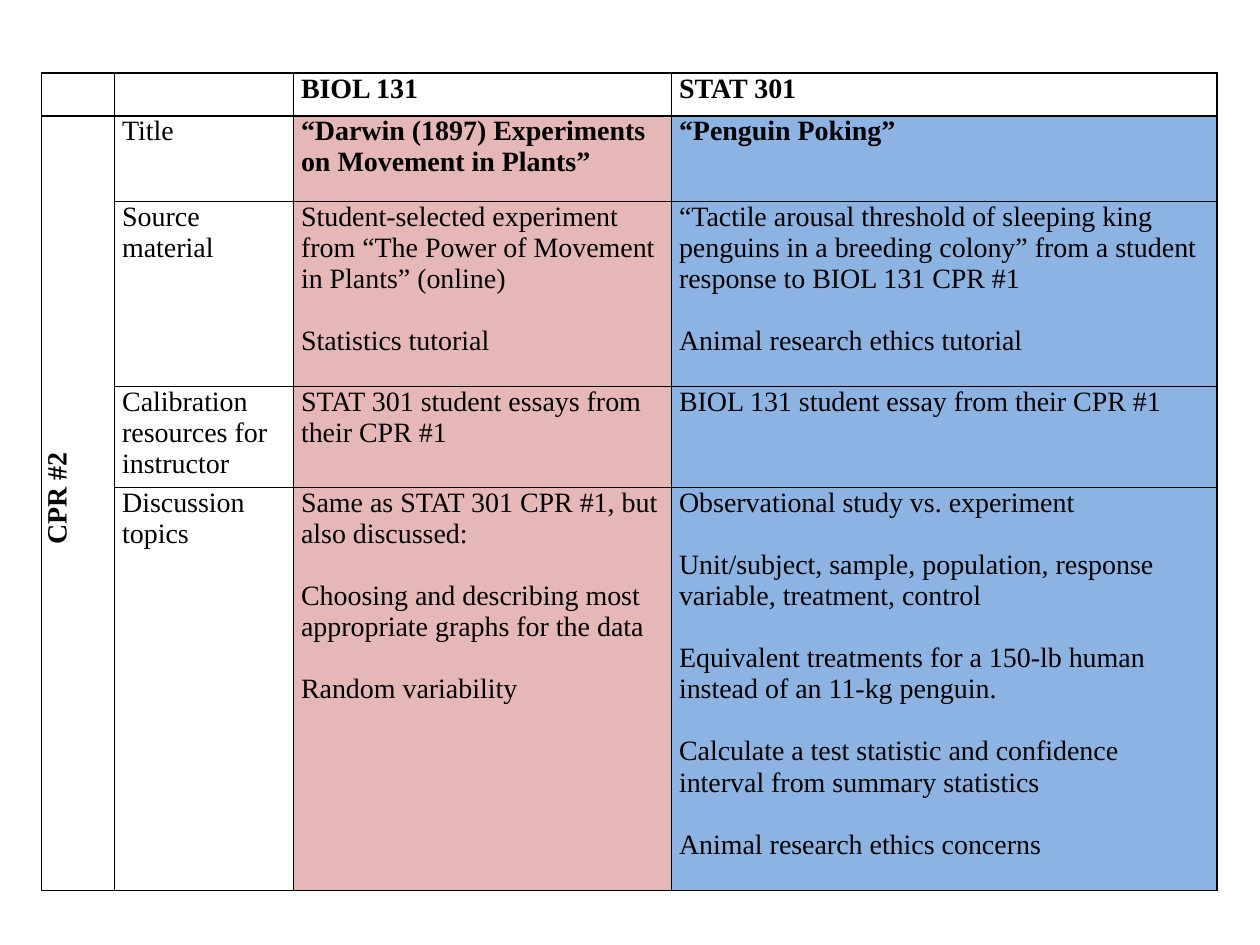
import pptx
import pptx.util
import pptx.dml.color
import pptx.enum.text
from lxml import etree
from pptx.oxml.ns import qn

Inches = pptx.util.Inches
Pt = pptx.util.Pt

BLACK, WHITE, ROSE, SKY = "000000", "FFFFFF", "E5B8B7", "8DB3E2"
COLUMN_WIDTHS = [0.58, 1.42, 3, 4.33]
ROW_HEIGHTS = [0.34, 0.68, 1.47, 0.8, 3.2]

# Row label, biology paragraphs, statistics paragraphs
TOPICS = [
    ("Title",
     ["“Darwin (1897) Experiments on Movement in Plants”"],
     ["“Penguin Poking”"]),
    ("Source material",
     ["Student-selected experiment from “The Power of Movement in Plants” (online)",
      "Statistics tutorial"],
     ["“Tactile arousal threshold of sleeping king penguins in a breeding colony” "
      "from a student response to BIOL 131 CPR #1",
      "Animal research ethics tutorial"]),
    ("Calibration resources for instructor",
     ["STAT 301 student essays from their CPR #1"],
     ["BIOL 131 student essay from their CPR #1"]),
    ("Discussion topics",
     ["Same as STAT 301 CPR #1, but also discussed:",
      "Choosing and describing most appropriate graphs for the data",
      "Random variability"],
     ["Observational study vs. experiment",
      "Unit/subject, sample, population, response variable, treatment, control",
      "Equivalent treatments for a 150-lb human instead of an 11-kg penguin.",
      "Calculate a test statistic and confidence interval from summary statistics",
      "Animal research ethics concerns"]),
]


def color(hex_string):
    return pptx.dml.color.RGBColor.from_string(hex_string)


class SlideWriter:
    font = "Times New Roman"
    size = 16
    paragraph_gap = 17.7  # one line of text

    def __init__(self, slide):
        self.slide = slide

    def table(self, left, top, widths, heights):
        frame = self.slide.shapes.add_table(
            len(heights), len(widths), Inches(left), Inches(top),
            Inches(sum(widths)), Inches(sum(heights)))
        table = frame.table
        table.first_row = table.horz_banding = False
        for column, width in zip(table.columns, widths):
            column.width = Inches(width)
        for row, height in zip(table.rows, heights):
            row.height = Inches(height)
        for cell in table.iter_cells():
            self.plain_cell(cell)
        return table

    def plain_cell(self, cell):
        cell.margin_left = cell.margin_right = Inches(0.06)
        cell.margin_top = cell.margin_bottom = 0
        properties = cell._tc.get_or_add_tcPr()
        for side in ("a:lnL", "a:lnR", "a:lnT", "a:lnB"):
            line = etree.SubElement(properties, qn(side), w=str(Pt(1)))
            fill = etree.SubElement(line, qn("a:solidFill"))
            etree.SubElement(fill, qn("a:srgbClr"), val=BLACK)
        cell.fill.background()

    def cell_text(self, cell, texts, fill=None, bold=False):
        if fill:
            cell.fill.solid()
            cell.fill.fore_color.rgb = color(fill)
        for index, text in enumerate(texts):
            frame = cell.text_frame
            para = frame.add_paragraph() if index else frame.paragraphs[0]
            if index:
                para.space_before = Pt(self.paragraph_gap)
            span = para.add_run()
            span.text = text
            span.font.name = self.font
            span.font.size = Pt(self.size)
            span.font.bold = bold
            span.font.color.rgb = color(BLACK)

    def vertical_label(self, cell, text):
        self.cell_text(cell, [text], bold=True)
        cell.vertical_anchor = pptx.enum.text.MSO_ANCHOR.MIDDLE
        cell._tc.get_or_add_tcPr().set("vert", "vert270")
        para = cell.text_frame.paragraphs[0]
        para.alignment = pptx.enum.text.PP_ALIGN.CENTER
        para._p.get_or_add_pPr().set("marL", str(Inches(0.08)))


def main():
    deck = pptx.Presentation()
    deck.slide_width, deck.slide_height = Inches(10), Inches(7.5)
    page = SlideWriter(deck.slides.add_slide(deck.slide_layouts[6]))
    table = page.table(0.33, 0.58, COLUMN_WIDTHS, ROW_HEIGHTS)

    # Course headings
    for column, course in enumerate(["BIOL 131", "STAT 301"], start=2):
        page.cell_text(table.cell(0, column), [course], WHITE, bold=True)

    # Assignment label down the left side
    table.cell(1, 0).merge(table.cell(len(TOPICS), 0))
    page.vertical_label(table.cell(1, 0), "CPR #2")

    # Topic rows, with the assignment titles in bold
    for row, (label, biology, statistics) in enumerate(TOPICS, start=1):
        page.cell_text(table.cell(row, 1), [label])
        page.cell_text(table.cell(row, 2), biology, ROSE, bold=row == 1)
        page.cell_text(table.cell(row, 3), statistics, SKY, bold=row == 1)

    deck.save("out.pptx")


if __name__ == "__main__":
    main()
